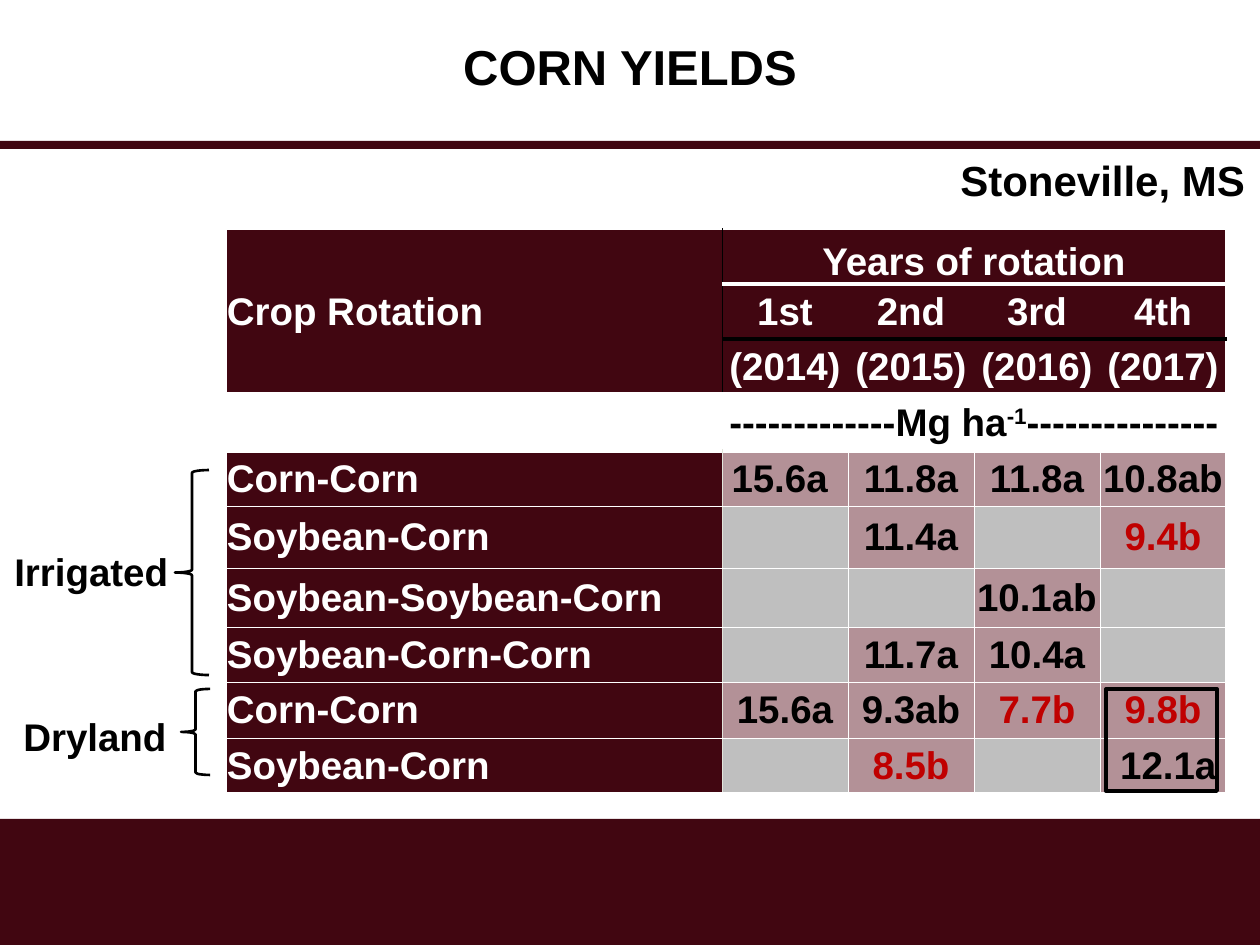
from pptx import Presentation, util as u
from pptx.dml.color import RGBColor
from pptx.enum import shapes, text
from pptx.oxml.ns import qn
from lxml import etree

COLORS = {"maroon": "410611", "rose": "B39197", "gray": "BFBFBF", "red": "C00000",
          "black": "000000", "white": "FFFFFF", "ivory": "E2E4DB"}
PX_PER_INCH = 126
COLUMN_WIDTHS = [496, 126, 126, 126, 126]
ROW_HEIGHTS = [55, 55, 55, 57, 55, 62, 59, 55, 56, 55]
HEADER_ROWS, UNIT_ROW = 3, 3
YEARS = [["1st", "2nd", "3rd", "4th"], ["(2014)", "(2015)", "(2016)", "(2017)"]]
YIELDS = [
    ["Corn-Corn", "15.6a ", "11.8a", "11.8a", "10.8ab"],
    ["Soybean-Corn", "", "11.4a", "", "9.4b"],
    ["Soybean-Soybean-Corn", "", "", "10.1ab", ""],
    ["Soybean-Corn-Corn", "", "11.7a", "10.4a", ""],
    ["Corn-Corn", "15.6a", "9.3ab", "7.7b", "9.8b"],
    ["Soybean-Corn", "", "8.5b", "", " 12.1a"],
]
HORIZONTAL_EDGES = {0: ("white", 0.75), 1: ("white", 2.25), 2: ("black", 2.25),
                    3: ("white", 2.25), 4: ("white", 2.25), 10: ("white", 0.75)}


def px(length):
    """Turn pixels into EMU."""
    return u.Inches(length / PX_PER_INCH)


def rgb(name):
    """Look up a named colour."""
    return RGBColor.from_string(COLORS[name])


def vertical_edge(row, column):
    """Return colour and width of the table edge left of a column, or None."""
    if column in (0, len(COLUMN_WIDTHS)):
        return "white", 0.75
    if column == 1 and row != UNIT_ROW:
        return ("black" if row < HEADER_ROWS else "ivory"), 0.25
    return ("white", 0.25) if row > UNIT_ROW else None


class SlideBuilder:
    """Hold the style and the current slide."""

    def __init__(self, slide, font="Arial"):
        """Keep the slide and the font."""
        self.slide, self.font = slide, font

    def run(self, paragraph, words, size=22, color="black"):
        """Add one bold run."""
        run = paragraph.add_run()
        run.text = words
        run.font.name, run.font.size, run.font.bold = self.font, u.Pt(size), True
        run.font.color.rgb = rgb(color)
        return run

    def title(self, words, left, top, width, height):
        """Place and fill the title placeholder."""
        title = self.slide.shapes.title
        title.left, title.top, title.width, title.height = map(px, (left, top, width, height))
        title.text_frame.vertical_anchor = text.MSO_ANCHOR.MIDDLE
        paragraph = title.text_frame.paragraphs[0]
        paragraph.alignment, paragraph.line_spacing = text.PP_ALIGN.CENTER, 0.9
        self.run(paragraph, words, 28)

    def label(self, words, left, top, width, height, size=22, wrap=True):
        """Add a text box of one line."""
        box = self.slide.shapes.add_textbox(*map(px, (left, top, width, height)))
        box.text_frame.word_wrap = wrap
        box.text_frame.auto_size = text.MSO_AUTO_SIZE.SHAPE_TO_FIT_TEXT
        self.run(box.text_frame.paragraphs[0], words, size)

    def shape(self, kind, left, top, width, height, fill=None, line=None):
        """Add a preset shape with a fill or a black outline."""
        shape = self.slide.shapes.add_shape(kind, *map(px, (left, top, width, height)))
        shape.shadow.inherit = False
        if fill:
            shape.fill.solid()
            shape.fill.fore_color.rgb = rgb(fill)
        else:
            shape.fill.background()
        if line:
            shape.line.width, shape.line.color.rgb = u.Pt(line), rgb("black")
        else:
            shape.line.fill.background()

    def table(self, left, top, column_widths, row_heights):
        """Add a table without style bands."""
        size = (left, top, sum(column_widths), sum(row_heights))
        table = self.slide.shapes.add_table(
            len(row_heights), len(column_widths), *map(px, size)).table
        table.first_row = table.horz_banding = False
        for column, width in zip(table.columns, column_widths):
            column.width = px(width)
        for row, height in zip(table.rows, row_heights):
            row.height = px(height)
        return table

    def borders(self, cell, edges):
        """Draw the left, right, top and bottom borders of a cell."""
        properties = cell._tc.get_or_add_tcPr()
        for side, edge in zip("LRTB", edges):
            line = etree.SubElement(properties, qn(f"a:ln{side}"))
            if edge is None:
                etree.SubElement(line, qn("a:noFill"))
                continue
            color, width = edge
            line.set("w", str(u.Pt(width)))
            fill = etree.SubElement(line, qn("a:solidFill"))
            etree.SubElement(fill, qn("a:srgbClr"), val=COLORS[color])

    def cell(self, table, row, column, words="", fill=None, color="black", span=(1, 1),
             anchor=text.MSO_ANCHOR.MIDDLE):
        """Format one cell and return its paragraph."""
        cell = table.cell(row, column)
        bottom, right = row + span[0], column + span[1]
        if span != (1, 1):
            cell.merge(table.cell(bottom - 1, right - 1))
        cell.margin_left = cell.margin_right = cell.margin_top = px(1)
        cell.margin_bottom = 0
        cell.vertical_anchor = anchor
        thin = ("white", 0.25)
        self.borders(cell, [vertical_edge(row, column), vertical_edge(row, right),
                            HORIZONTAL_EDGES.get(row, thin), HORIZONTAL_EDGES.get(bottom, thin)])
        if fill:
            cell.fill.solid()
            cell.fill.fore_color.rgb = rgb(fill)
        else:
            cell.fill.background()
        paragraph = cell.text_frame.paragraphs[0]
        paragraph.alignment = text.PP_ALIGN.CENTER if column else text.PP_ALIGN.LEFT
        if words:
            self.run(paragraph, words, color=color)
        return paragraph


def add_yield_table(builder):
    """Build the table of corn yields by rotation and year."""
    table = builder.table(226, 229, COLUMN_WIDTHS, ROW_HEIGHTS)
    builder.cell(table, 0, 0, "Crop Rotation", "maroon", "white", (HEADER_ROWS, 1))
    builder.cell(table, 0, 1, "Years of rotation", "maroon", "white", (1, 4),
                 text.MSO_ANCHOR.BOTTOM)
    for row, labels in enumerate(YEARS, 1):
        for column, words in enumerate(labels, 1):
            builder.cell(table, row, column, words, "maroon", "white")
    builder.cell(table, UNIT_ROW, 0)
    unit = builder.cell(table, UNIT_ROW, 1, "-------------Mg ha", span=(1, 4))
    builder.run(unit, "-1").font._element.set("baseline", "30000")
    builder.run(unit, "---------------")
    for row, (rotation, *values) in enumerate(YIELDS, UNIT_ROW + 1):
        builder.cell(table, row, 0, rotation, "maroon", "white")
        for column, value in enumerate(values, 1):
            lower = value.endswith("b") and not value.endswith("ab")
            builder.cell(table, row, column, value, "rose" if value else "gray",
                         "red" if lower else "black")


def main():
    """Build and save the slide."""
    presentation = Presentation()
    presentation.slide_width, presentation.slide_height = px(1260), px(945)
    builder = SlideBuilder(presentation.slides.add_slide(presentation.slide_layouts[5]))
    rectangle, brace = shapes.MSO_SHAPE.RECTANGLE, shapes.MSO_SHAPE.LEFT_BRACE
    builder.shape(rectangle, 0, 819, 1260, 126, fill="maroon")
    builder.title("CORN YIELDS", 0, 0, 1260, 140)
    builder.shape(rectangle, 0, 141, 1260, 8, fill="maroon")
    add_yield_table(builder)
    builder.label("Stoneville, MS", 948, 148, 312, 63, size=24, wrap=False)
    builder.shape(brace, 175, 470, 34, 205, line=1.5)
    builder.label("Irrigated", 2, 542, 188, 59)
    builder.shape(brace, 181, 689, 29, 86, line=1.5)
    builder.label("Dryland", 11, 707, 170, 59)
    builder.shape(rectangle, 1106, 689, 111, 102, line=2.25)
    presentation.save("out.pptx")


if __name__ == "__main__":
    main()
